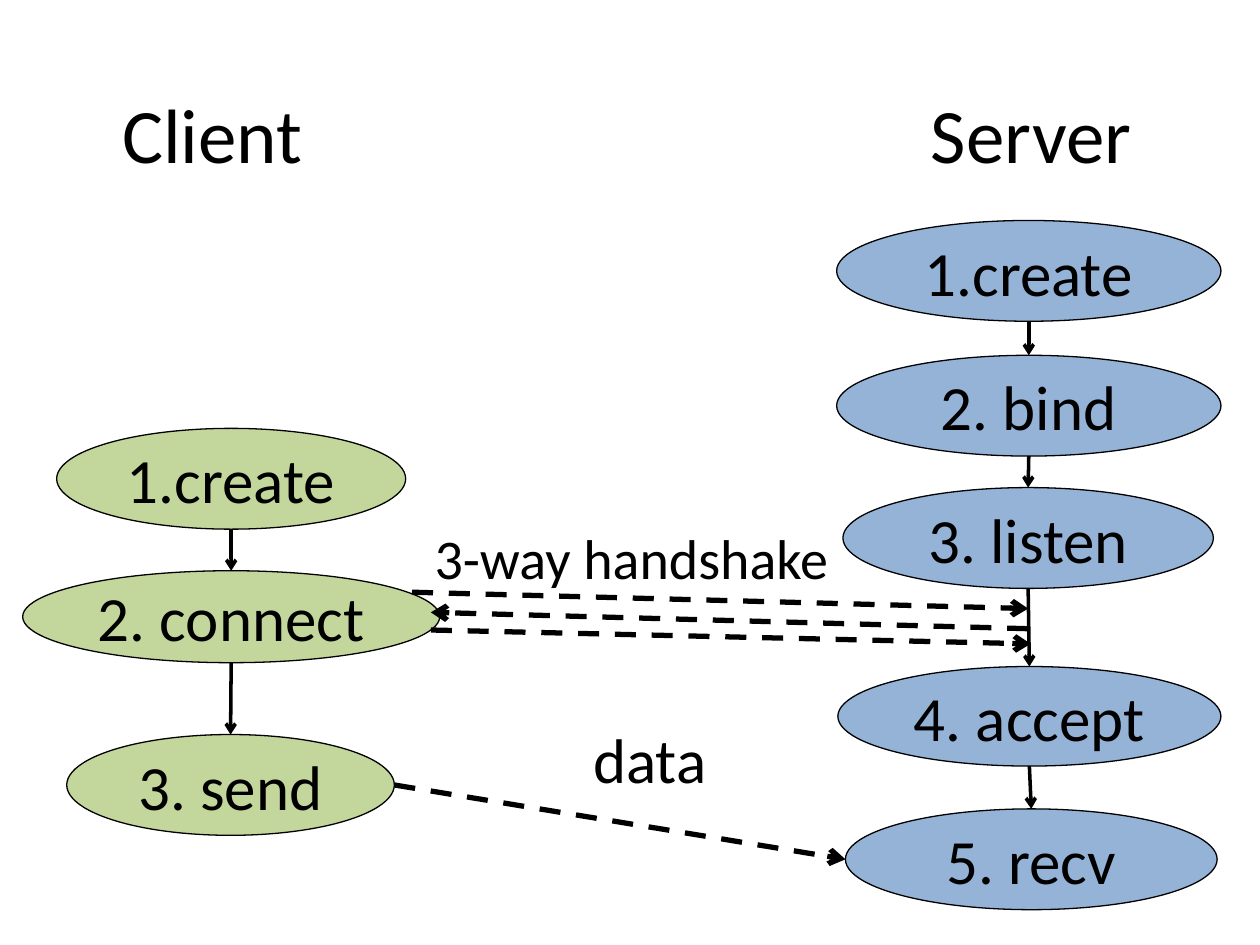
from dataclasses import dataclass
from itertools import pairwise

from lxml import etree
from pptx import Presentation
from pptx import util as u
from pptx.dml.color import RGBColor
from pptx.enum import dml, shapes, text
from pptx.oxml.ns import qn

FONT = "Calibri"
BLACK, GREEN, BLUE = "000000", "C3D69B", "95B3D7"


@dataclass
class Step:
    label: str
    left: float
    top: float
    width: float
    height: float = 0.8

    @property
    def center(self) -> float:
        return self.left + self.width / 2

    @property
    def middle(self) -> float:
        return self.top + self.height / 2

    @property
    def bottom(self) -> float:
        return self.top + self.height


@dataclass
class Caption:
    label: str
    left: float
    top: float
    width: float
    height: float
    size: int


@dataclass
class Arrow:
    start: tuple[float, float]
    end: tuple[float, float]
    weight: float = 3
    dashed: bool = True


def color(value: str) -> RGBColor:
    return RGBColor.from_string(value)


def write(frame, label: str, size: int) -> None:
    frame.word_wrap = False
    run = frame.paragraphs[0].add_run()
    run.text = label
    run.font.name = FONT
    run.font.size = u.Pt(size)
    run.font.color.rgb = color(BLACK)


def draw_step(slide, step: Step, fill: str) -> None:
    box = map(u.Inches, (step.left, step.top, step.width, step.height))
    oval = slide.shapes.add_shape(shapes.MSO_SHAPE.OVAL, *box)
    oval.shadow.inherit = False
    oval.fill.solid()
    oval.fill.fore_color.rgb = color(fill)
    oval.line.color.rgb = color(BLACK)
    oval.line.width = u.Pt(0.75)
    oval.text_frame.vertical_anchor = text.MSO_ANCHOR.MIDDLE
    write(oval.text_frame, step.label, 36)
    oval.text_frame.paragraphs[0].alignment = text.PP_ALIGN.CENTER


def draw_caption(slide, caption: Caption) -> None:
    box = map(u.Inches, (caption.left, caption.top, caption.width, caption.height))
    frame = slide.shapes.add_textbox(*box).text_frame
    write(frame, caption.label, caption.size)
    frame.auto_size = text.MSO_AUTO_SIZE.SHAPE_TO_FIT_TEXT


def draw_arrow(slide, arrow: Arrow) -> None:
    ends = map(u.Inches, (*arrow.start, *arrow.end))
    connector = slide.shapes.add_connector(shapes.MSO_CONNECTOR.STRAIGHT, *ends)
    connector.line.color.rgb = color(BLACK)
    connector.line.width = u.Pt(arrow.weight)
    if arrow.dashed:
        connector.line.dash_style = dml.MSO_LINE.DASH
    properties = connector._element.spPr
    etree.SubElement(properties.find(qn("a:ln")), qn("a:tailEnd"), type="arrow")
    etree.SubElement(properties, qn("a:effectLst"))


CLIENT = [
    Step("1.create", 0.45, 3.4, 2.77),
    Step("2. connect", 0.18, 4.53, 3.31, 0.73),
    Step("3. send", 0.53, 5.83, 2.6),
]
SERVER = [
    Step("1.create", 6.64, 1.75, 3.05),
    Step("2. bind", 6.64, 2.82, 3.05),
    Step("3. listen", 6.69, 3.87, 2.94),
    Step("4. accept", 6.65, 5.29, 3.04, 0.79),
    Step("5. recv", 6.71, 6.42, 2.95),
]
CAPTIONS = [
    Caption("3-way handshake", 3.35, 4.11, 3.38, 0.64, 32),
    Caption("data", 4.61, 5.67, 1.12, 0.55, 36),
    Caption("Client", 0.87, 0.64, 1.65, 0.84, 44),
    Caption("Server", 7.29, 0.64, 1.81, 0.84, 44),
]
HANDSHAKE = [
    Arrow((3.27, 4.7), (8.16, 4.83)),
    Arrow((8.16, 4.99), (3.42, 4.86)),
    Arrow((3.42, 5), (8.18, 5.11)),
]


def main() -> None:
    deck = Presentation()
    deck.slide_width, deck.slide_height = u.Inches(10), u.Inches(7.5)
    slide = deck.slides.add_slide(deck.slide_layouts[6])

    # Steps of each side, joined from top to bottom
    for steps, fill in ((CLIENT, GREEN), (SERVER, BLUE)):
        for step in steps:
            draw_step(slide, step, fill)
        for upper, lower in pairwise(steps):
            start, end = (upper.center, upper.bottom), (lower.center, lower.top)
            draw_arrow(slide, Arrow(start, end, weight=2, dashed=False))

    # Messages between the two sides
    send, recv = CLIENT[-1], SERVER[-1]
    data = Arrow((send.left + send.width, send.middle), (recv.left, recv.middle))
    for message in (*HANDSHAKE, data):
        draw_arrow(slide, message)

    # Headings and message names
    for caption in CAPTIONS:
        draw_caption(slide, caption)

    deck.save("out.pptx")


if __name__ == "__main__":
    main()
